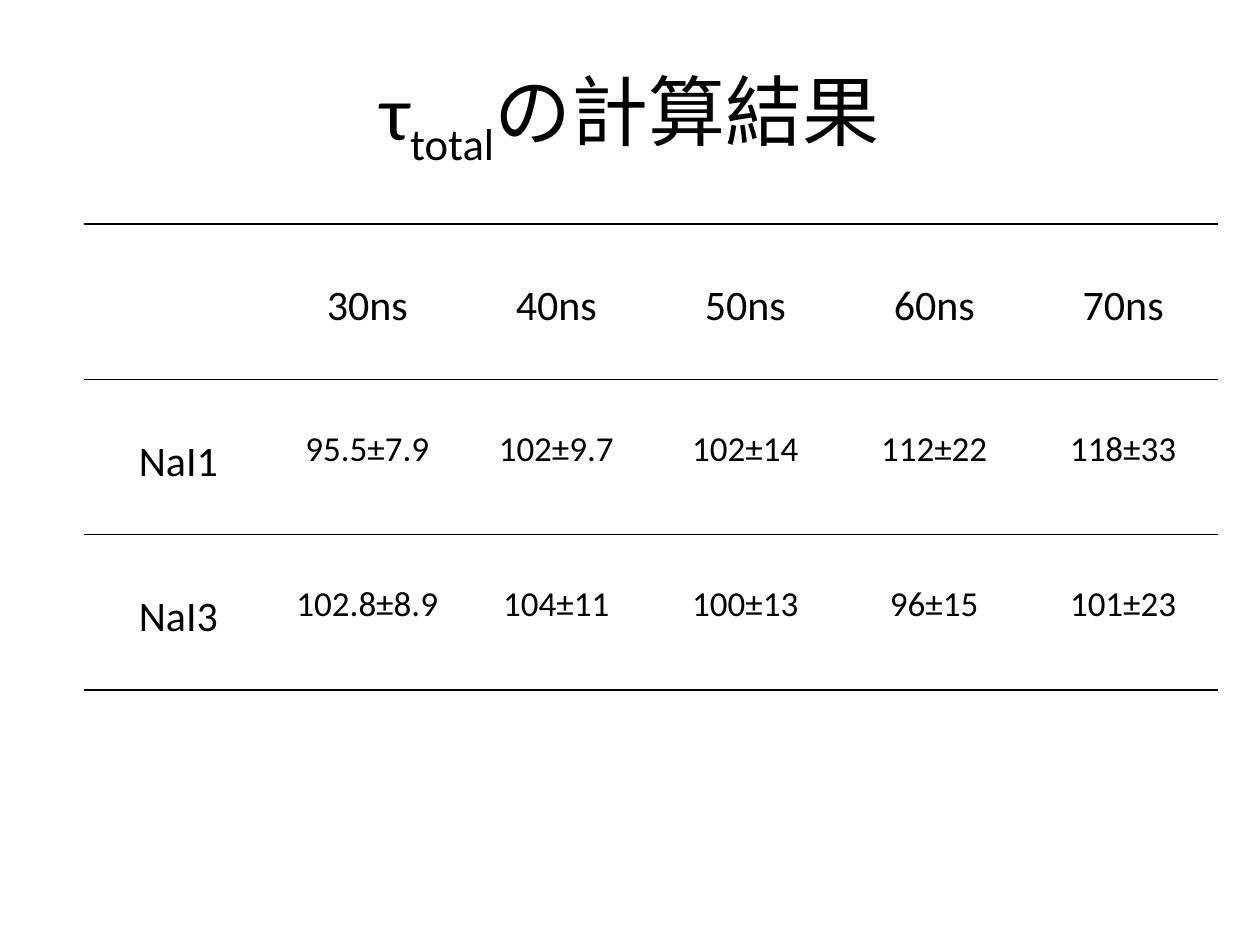
from lxml.etree import SubElement as Sub
from pptx import Presentation
from pptx.dml.color import RGBColor as Rgb
from pptx.enum.text import MSO_ANCHOR as Anchor, PP_ALIGN as Align
from pptx.oxml.ns import qn
from pptx.util import Emu, Pt

SCALE = 914400 // 126
COLORS = {"ink": "000000", "back": "FFFFFF"}
PLAIN = "{2D5ABB26-0587-4C30-8999-92F81FD0307C}"


def px(num):
    """Turn pixels into EMU."""
    return Emu(num * SCALE)


class Deck:
    """Holds the style and the current slide."""

    font = "Calibri"

    def __init__(self, wide, high):
        """Start a deck with one blank slide."""
        self.prs = Presentation()
        self.prs.slide_width, self.prs.slide_height = px(wide), px(high)
        self.slide = self.prs.slides.add_slide(self.prs.slide_layouts[6])
        fill = self.slide.background.fill
        fill.solid()
        fill.fore_color.rgb = Rgb.from_string(COLORS["back"])

    def text(self, para, runs, size):
        """Add centred runs, each a text and its baseline shift in percent."""
        para.alignment = Align.CENTER
        for words, shift in runs:
            run = para.add_run()
            run.text = words
            run.font.size = Pt(size)
            run.font.name = self.font
            run.font.color.rgb = Rgb.from_string(COLORS["ink"])
            if shift:
                run.font._element.set("baseline", str(shift * 1000))

    def title(self, box, runs, size):
        """Add the heading in a text box."""
        frame = self.slide.shapes.add_textbox(*map(px, box)).text_frame
        frame.word_wrap = True
        frame.vertical_anchor = Anchor.MIDDLE
        self.text(frame.paragraphs[0], runs, size)

    def rule(self, cell, side):
        """Draw a thin border on one side of a cell."""
        line = Sub(cell._tc.get_or_add_tcPr(), qn(f"a:ln{side}"), w=str(Pt(1)))
        Sub(Sub(line, qn("a:solidFill")), qn("a:srgbClr"), val=COLORS["ink"])

    def table(self, box, rows, sizes, drops):
        """Add a table with rules above, below and under its header."""
        shape = self.slide.shapes.add_table(len(rows), len(rows[0]), *map(px, box))
        table = shape.table
        table.first_row = table.horz_banding = False
        table._tbl.tblPr[0].text = PLAIN
        for i, row in enumerate(rows):
            for j, words in enumerate(row):
                cell = table.cell(i, j)
                if i < 2:
                    self.rule(cell, "T")
                if i in (0, len(rows) - 1):
                    self.rule(cell, "B")
                cell.fill.background()
                kind = "head" if i == 0 or j == 0 else "value"
                cell.margin_top = px(drops[kind])
                if words:
                    para = cell.text_frame.paragraphs[0]
                    self.text(para, [(words, 0)], sizes[kind])


def main():
    """Build the slide and save it."""
    deck = Deck(1260, 945)
    deck.title((63, 38, 1134, 157), [("τ", 0), ("total", -25), ("の計算結果", 0)], 44)
    rows = [
        ["", "30ns", "40ns", "50ns", "60ns", "70ns"],
        ["NaI1", "95.5±7.9", "102±9.7", "102±14", "112±22", "118±33"],
        ["NaI3", "102.8±8.9", "104±11", "100±13", "96±15", "101±23"],
    ]
    sizes = {"head": 24, "value": 20}
    drops = {"head": 57, "value": 49}
    deck.table((84, 224, 1134, 466), rows, sizes, drops)
    deck.prs.save("out.pptx")


main()
